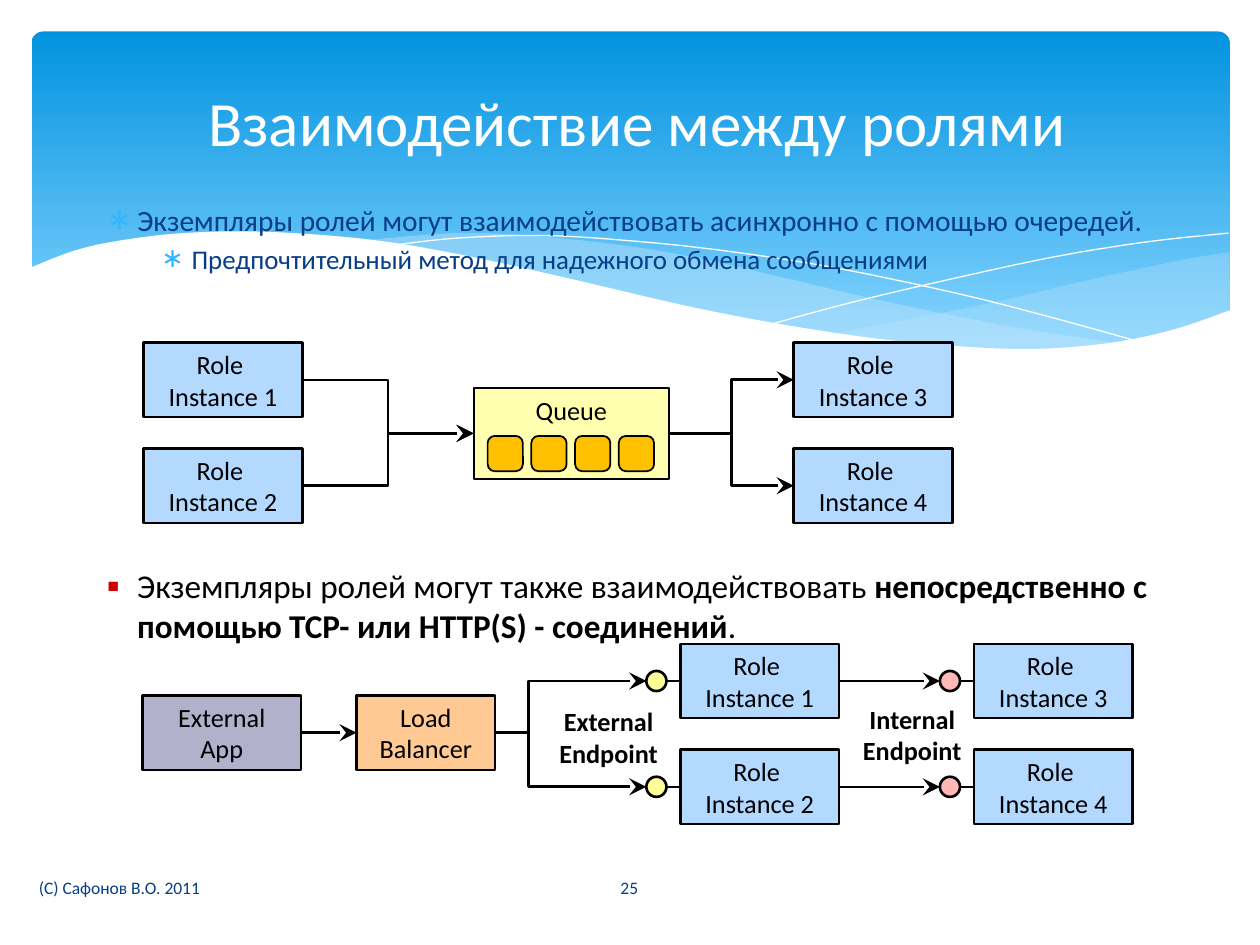
from dataclasses import dataclass
from itertools import chain, product

from lxml.etree import SubElement
from pptx import Presentation
from pptx.dml.color import RGBColor
from pptx.enum.shapes import MSO_CONNECTOR as Link, MSO_SHAPE as Shape
from pptx.enum.text import MSO_ANCHOR as Anchor, MSO_AUTO_SIZE as Fit, PP_ALIGN as Align
from pptx.oxml.ns import qn
from pptx.util import Inches, Pt

WHITE = RGBColor(0xFF, 0xFF, 0xFF)
BLACK = RGBColor(0, 0, 0)
NAVY = RGBColor(0x07, 0x3E, 0x87)
SKY = RGBColor(0x31, 0xB6, 0xFD)
RED = RGBColor(0xCC, 0, 0)
BANNER_TOP = RGBColor(0x02, 0x93, 0xE0)
BANNER_END = RGBColor(0x83, 0xD3, 0xFE)
MIST = RGBColor(0xC6, 0xE7, 0xFC)
ROLE_BLUE = RGBColor(0xB3, 0xD9, 0xFF)
QUEUE_YELLOW = RGBColor(0xFF, 0xFF, 0xAF)
ITEM_GOLD = RGBColor(0xFF, 0xC0, 0)
APP_VIOLET = RGBColor(0xB1, 0xB1, 0xCB)
BALANCER_ORANGE = RGBColor(0xFF, 0xC9, 0x93)
EXTERNAL_YELLOW = RGBColor(0xFF, 0xFF, 0x99)
INTERNAL_PINK = RGBColor(0xFF, 0xB7, 0xB7)

FONT = "Calibri"
COLS, ROWS = 100, 75
BOX_W, BOX_H, DOT = 12.6, 5.9, 1.6

prs = Presentation()
prs.slide_width, prs.slide_height = Inches(10), Inches(7.5)
CELL = prs.slide_width / COLS
slide = prs.slides.add_slide(prs.slide_layouts[1])
shapes = slide.shapes


@dataclass
class Box:
    col: float
    row: float
    text: str = ""
    fill: RGBColor = ROLE_BLUE
    w: float = BOX_W
    h: float = BOX_H
    kind: Shape = Shape.RECTANGLE
    line: float = 1.5
    anchor: Anchor = Anchor.MIDDLE

    @property
    def left(self) -> tuple:
        return self.col, self.row + self.h / 2

    @property
    def right(self) -> tuple:
        return self.col + self.w, self.row + self.h / 2


def grid(*cells: float) -> list:
    return [round(c * CELL) for c in cells]


def put_text(p, text, size=15, color=BLACK, bold=False, align=None, before=0,
             bullet=None, bullet_color=SKY, bullet_size=100, margin=0.24):
    if align is not None:
        p.alignment = align
    p.space_before = Pt(before)
    for n, part in enumerate(text.split("\n")):
        if n:
            p.add_line_break()
        r = p.add_run()
        r.text = part
        f = r.font
        f.name, f.size, f.bold, f.color.rgb = FONT, Pt(size), bold, color
    if bullet and p._p.find(qn("a:pPr")).find(qn("a:buChar")) is None:
        pr = p._p.find(qn("a:pPr"))
        pr.set("marL", str(Inches(margin)))
        pr.set("indent", str(-Inches(0.24)))
        SubElement(SubElement(pr, qn("a:buClr")), qn("a:srgbClr"), val=str(bullet_color))
        SubElement(pr, qn("a:buSzPct"), val=str(bullet_size * 1000))
        SubElement(pr, qn("a:buFont"), typeface=FONT)
        SubElement(pr, qn("a:buChar"), char=bullet)


def draw_box(b: Box):
    sp = shapes.add_shape(b.kind, *grid(b.col, b.row, b.w, b.h))
    sp.shadow.inherit = False
    sp.fill.solid()
    sp.fill.fore_color.rgb = b.fill
    sp.line.color.rgb, sp.line.width = BLACK, Pt(b.line)
    if b.text:
        tf = sp.text_frame
        tf.word_wrap, tf.vertical_anchor = False, b.anchor
        put_text(tf.paragraphs[0], b.text, align=Align.CENTER)
    return sp


def draw_link(start: tuple, end: tuple, bend: float = 0, arrow: bool = True) -> None:
    kind = Link.ELBOW if bend else Link.STRAIGHT
    cx = shapes.add_connector(kind, *grid(*start, *end))
    cx.line.color.rgb, cx.line.width = BLACK, Pt(1.5)
    pr = cx.element.spPr
    if bend:
        SubElement(pr.find(".//" + qn("a:avLst")), qn("a:gd"),
                   name="adj1", fmla=f"val {round(bend * 100000)}")
    if arrow:
        SubElement(pr.find(qn("a:ln")), qn("a:tailEnd"), type="stealth", w="lg", len="lg")
    SubElement(pr, qn("a:effectLst"))


def draw_label(col, row, w, h, text, anchor=Anchor.TOP, **fmt):
    tf = shapes.add_textbox(*grid(col, row, w, h)).text_frame
    tf.word_wrap, tf.vertical_anchor = True, anchor
    put_text(tf.paragraphs[0], text, **fmt)
    return tf


def smooth_edge(pts: list, steps: int = 8) -> list:
    padded = [pts[0], *pts, pts[-1]]
    edge = [pts[0]]
    for a, b, c, d in zip(padded, padded[1:], padded[2:], padded[3:]):
        for t in (s / steps for s in range(1, steps + 1)):
            edge.append(tuple(
                (2 * q + (r - p) * t + (2 * p - 5 * q + 4 * r - s) * t ** 2
                 + (3 * q - p - 3 * r + s) * t ** 3) / 2
                for p, q, r, s in zip(a, b, c, d)))
    return edge


def draw_wave(*edges: list, fill: RGBColor = None, alpha: int = 100) -> None:
    first, *rest = [grid(*pt) for pt in chain(*map(smooth_edge, edges))]
    fb = shapes.build_freeform(*first, scale=1.0)
    fb.add_line_segments(rest, close=fill is not None)
    sp = fb.convert_to_shape()
    sp.shadow.inherit = False
    if fill is None:
        sp.fill.background()
        sp.line.color.rgb, sp.line.width = WHITE, Pt(0)
        return
    sp.line.fill.background()
    sp.fill.solid()
    sp.fill.fore_color.rgb = fill
    color = sp.element.spPr.find(qn("a:solidFill")).find(qn("a:srgbClr"))
    SubElement(color, qn("a:alpha"), val=str(alpha * 1000))


banner = draw_box(Box(2.5, 2.5, fill=BANNER_TOP, w=95.1, h=27, kind=Shape.ROUNDED_RECTANGLE))
banner.adjustments[0] = 0.034
banner.line.fill.background()
banner.fill.gradient()
banner.fill.gradient_angle = 270
for stop, color, position in zip(banner.fill.gradient_stops, (BANNER_TOP, BANNER_END), (0, 0.9)):
    stop.color.rgb, stop.position = color, position

draw_wave([(97.6, 20), (93.5, 20.7), (86.1, 22.3), (77.9, 24.2), (66.1, 26.5)],
          [(66.1, 26.5), (71.9, 27.1), (76.9, 27.7), (82.4, 27.7), (88.1, 27.3), (93.5, 26.2), (97.6, 24.7)],
          fill=MIST, alpha=29)
draw_wave([(89.3, 27.3), (80.7, 26), (70.6, 24), (62.9, 22.2), (55.5, 20.5), (48.9, 19.4),
           (42, 18.7), (36.1, 18.5), (28.6, 19.1)],
          [(28.6, 19.1), (36.2, 20.3), (44.9, 22.2), (56.6, 24.8), (66.5, 26.6), (74.8, 27.6),
           (82.8, 27.8), (89.3, 27.3)], fill=MIST, alpha=40)
draw_wave([(30.9, 19.5), (36.3, 18.9), (43.3, 18.7), (51, 19.2), (58.2, 20), (66.5, 21.3),
           (76, 23.3), (83.1, 25.1), (90.7, 27.2)])
draw_wave([(61.3, 25.7), (67.2, 24.1), (74.8, 22.3), (83.6, 20.4), (91, 19.2), (97.5, 18.5)])
draw_wave([(97.7, 24.6), (93, 26.2), (87.5, 27.3), (80.9, 27.7), (72.6, 27.2), (64.8, 26.2),
           (55.5, 24.5), (44.7, 22), (36.5, 20.2), (29.2, 19), (21.1, 18.4), (14.6, 18.5),
           (9.5, 19.1), (5.9, 19.9), (2.3, 21.3)],
          [(2.3, 32.9), (97.7, 32.9)], fill=WHITE)

title, body = slide.placeholders
for ph, area, anchor in ((title, (5, 3.7, 91.1, 11.9), Anchor.MIDDLE),
                         (body, (7.5, 15.5, 85, 11.2), Anchor.TOP)):
    ph.left, ph.top, ph.width, ph.height = grid(*area)
    ph.text_frame.vertical_anchor, ph.text_frame.auto_size = anchor, Fit.NONE
    ph.element.getparent().append(ph.element)
put_text(title.text_frame.paragraphs[0], "Взаимодействие между ролями",
         size=36, color=WHITE, align=Align.CENTER)
tf = body.text_frame
put_text(tf.paragraphs[0], "Экземпляры ролей могут взаимодействовать асинхронно с помощью очередей.",
         size=16.8, color=NAVY, before=3.4, bullet="∗")
p = tf.add_paragraph()
p.level = 1
put_text(p, "Предпочтительный метод для надежного обмена сообщениями",
         size=15.4, color=NAVY, before=3.1, bullet="∗", margin=0.67)

queue = Box(37.6, 30.8, "Queue", QUEUE_YELLOW, 15.5, 7.2, Shape.FLOWCHART_PROCESS, 1, Anchor.TOP)
draw_box(queue)
for n in range(4):
    item = draw_box(Box(38.7 + 3.47 * n, 34.6, fill=ITEM_GOLD, w=2.8, h=2.8,
                        kind=Shape.ROUNDED_RECTANGLE, line=1))
    item.adjustments[0] = 0.2
for side, n in product(range(2), range(2)):
    role = Box((11.4, 63)[side], 27.2 + 8.4 * n, f"Role \nInstance {2 * side + n + 1}")
    draw_box(role)
    ends = (queue.right, role.left) if side else (role.right, queue.left)
    draw_link(*ends, bend=0.5)

tf = draw_label(7.5, 44.4, 85.5, 6.4, "Экземпляры ролей могут также взаимодействовать ",
                size=19, before=3.8, bullet="▪", bullet_color=RED, bullet_size=110)
for text, bold in (("непосредственно с помощью TCP- или HTTP(S) - соединений", True), (".", False)):
    put_text(tf.paragraphs[0], text, size=19, before=3.8, bold=bold)

app = Box(11.3, 55.2, "External\nApp", APP_VIOLET)
balancer = Box(28.3, 55.2, "Load\nBalancer", BALANCER_ORANGE, w=11)
draw_box(app)
draw_box(balancer)
draw_link(app.right, balancer.left)
for n in range(2):
    source, bend = balancer, 0.22
    for side, (col, color) in enumerate(((54, EXTERNAL_YELLOW), (77.3, INTERNAL_PINK))):
        role = Box(col, 51.1 + 8.4 * n, f"Role \nInstance {2 * side + n + 1}")
        dot = Box(col - 2.7, role.left[1] - DOT / 2, fill=color, w=DOT, h=DOT, kind=Shape.OVAL)
        draw_box(role)
        draw_link(dot.right, role.left, arrow=False)
        draw_box(dot)
        draw_link(source.right, dot.left, bend=bend)
        source, bend = role, 0

for col, row, text in ((43.4, 55.5, "External Endpoint"), (67.5, 55.3, "Internal Endpoint")):
    draw_label(col, row, 9.8, 6.1, text, bold=True, align=Align.CENTER)
for col, w, text, align in ((2.1, 41.4, "(C) Сафонов В.О. 2011", Align.LEFT),
                            (43.6, 12.7, "25", Align.CENTER)):
    draw_label(col, 68.4, w, 4, text, anchor=Anchor.MIDDLE, size=10, color=NAVY, align=align)

prs.save("out.pptx")
